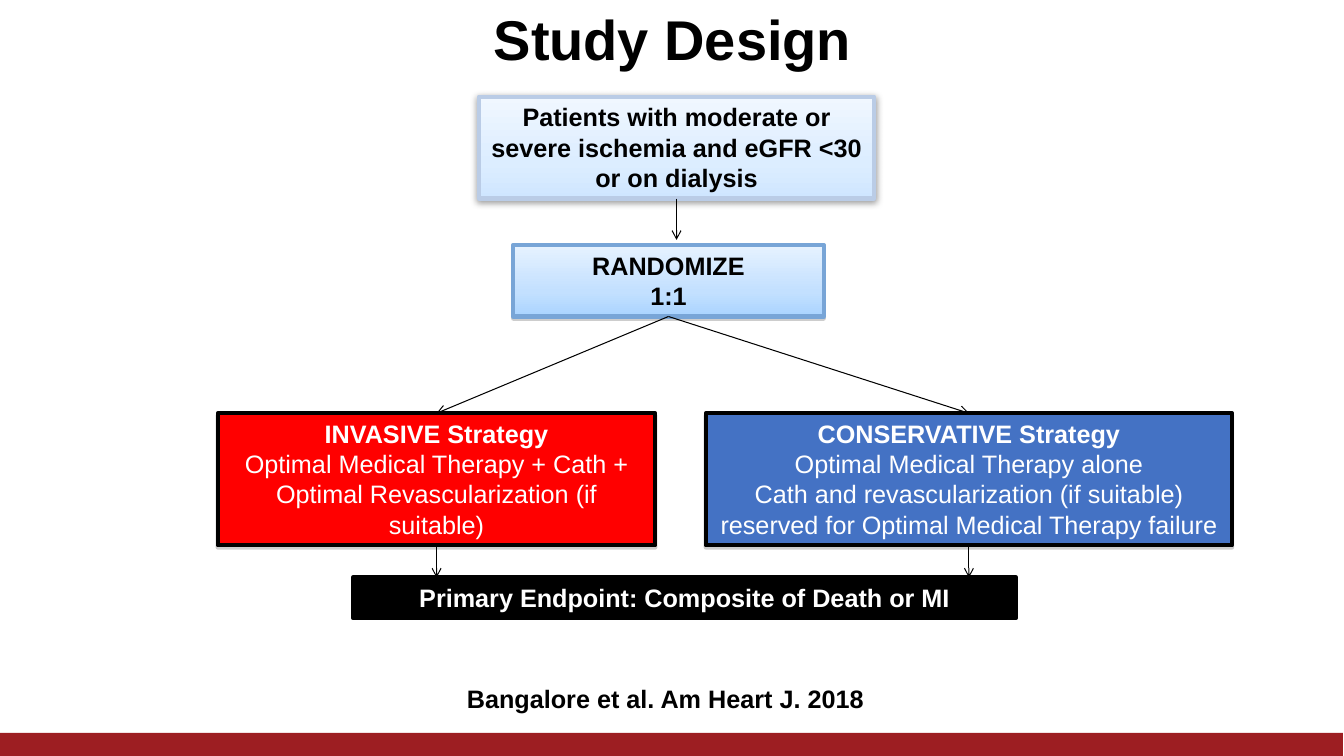
from lxml import etree
from pptx import Presentation
from pptx.dml.color import RGBColor
from pptx.enum.shapes import MSO_CONNECTOR, MSO_SHAPE
from pptx.enum.text import MSO_ANCHOR, MSO_AUTO_SIZE, PP_ALIGN
from pptx.oxml.ns import qn
from pptx.util import Inches, Pt

RECTANGLE = MSO_SHAPE.RECTANGLE
STRAIGHT = MSO_CONNECTOR.STRAIGHT
TOP, MIDDLE = MSO_ANCHOR.TOP, MSO_ANCHOR.MIDDLE
CENTER = PP_ALIGN.CENTER
GROW, FIXED = MSO_AUTO_SIZE.SHAPE_TO_FIT_TEXT, MSO_AUTO_SIZE.NONE
TOP_SIDE, BOTTOM_SIDE = 0, 2

COLORS = {
    "black": "000000", "white": "FFFFFF", "gray": "808080",
    "band": "9D1E22", "red": "FF0000", "blue": "4472C4",
    "randomize_edge": "78A5D7", "patients_edge": "BACCE6",
}
PATIENTS_STOPS = [(0, "F0F7FF"), (65, "DCEDFF"), (100, "CFE6FF")]
RANDOMIZE_STOPS = [(0, "E6F2FF"), (65, "C3E0FF"), (100, "AAD4FF")]


def rgb(name):
    return RGBColor.from_string(COLORS[name])


class SlideBuilder:
    """Holds the text style and the slide being filled."""

    style = {"name": "Arial", "size": Pt(18), "bold": True}

    def __init__(self, slide):
        self.slide = slide

    def set_text(self, box, lines, color="black", anchor=TOP, fit=GROW, spacing=None, **formats):
        frame = box.text_frame
        frame.word_wrap = True
        frame.auto_size = fit
        frame.vertical_anchor = anchor
        for index, line in enumerate(lines):
            para = frame.paragraphs[0] if index == 0 else frame.add_paragraph()
            para.alignment = CENTER
            para.line_spacing = spacing
            text, changes = line if isinstance(line, tuple) else (line, {})
            span = para.add_run()
            span.text = text
            for key, value in {**self.style, **formats, **changes}.items():
                setattr(span.font, key, value)
            span.font.color.rgb = rgb(color)

    def text(self, place, lines, **formats):
        box = self.slide.shapes.add_textbox(*map(Inches, place))
        self.set_text(box, lines, **formats)

    def box(self, place, fill, edge=None, lines=(), color="black", shadow=None):
        box = self.slide.shapes.add_shape(RECTANGLE, *map(Inches, place))
        box.shadow.inherit = False
        if isinstance(fill, list):
            self.shade(box, fill)
        else:
            box.fill.solid()
            box.fill.fore_color.rgb = rgb(fill)
        if edge:
            box.line.color.rgb = rgb(edge)
            box.line.width = Pt(3)
        else:
            box.line.fill.background()
        if shadow:
            self.cast_shadow(box, *shadow)
        if lines:
            self.set_text(box, lines, color)
        return box

    def shade(self, box, stops):
        box.fill.gradient()
        box.fill.gradient_angle = 270  # light at the top
        stop_list = box.element.spPr.find(".//" + qn("a:gsLst"))
        for stop in list(stop_list):
            stop_list.remove(stop)
        for position, color in stops:
            stop = etree.SubElement(stop_list, qn("a:gs"), pos=str(position * 1000))
            etree.SubElement(stop, qn("a:srgbClr"), val=color)

    def cast_shadow(self, box, color, blur):
        effects = box.element.spPr.find(qn("a:effectLst"))
        shadow = etree.SubElement(
            effects, qn("a:outerShdw"), blurRad=str(Pt(blur)), dist=str(Pt(1.6)),
            dir="5400000", algn="ctr", rotWithShape="0")
        tint = etree.SubElement(shadow, qn("a:srgbClr"), val=COLORS[color])
        etree.SubElement(tint, qn("a:alpha"), val="38000")

    def arrow(self, start, end, source, target=None):
        arrow = self.slide.shapes.add_connector(STRAIGHT, *map(Inches, (*start, *end)))
        arrow.begin_connect(source, BOTTOM_SIDE)
        if target:
            arrow.end_connect(target, TOP_SIDE)
        arrow.line.color.rgb = rgb("black")
        arrow.line.width = Pt(0.75)
        properties = arrow.element.spPr
        etree.SubElement(properties.find(qn("a:ln")), qn("a:tailEnd"), type="arrow")
        etree.SubElement(properties, qn("a:effectLst"))


def main():
    deck = Presentation()
    deck.slide_width, deck.slide_height = Inches(13.33), Inches(7.5)
    page = SlideBuilder(deck.slides.add_slide(deck.slide_layouts[6]))
    plain = {"bold": False}

    # Footer band and title
    page.box((-0.01, 7.27, 13.33, 0.23), "band")
    page.text((2.09, 0.07, 9.16, 0.71), ["Study Design"],
              size=Pt(40), anchor=MIDDLE, fit=FIXED, spacing=0.9)

    # Enrolment and randomization
    patients = page.box(
        (4.75, 0.96, 3.92, 1.01), PATIENTS_STOPS, "patients_edge",
        ["Patients with moderate or severe ischemia and eGFR <30 or on dialysis"],
        shadow=("black", 5))
    randomize = page.box(
        (5.09, 2.43, 3.08, 0.71), RANDOMIZE_STOPS, "randomize_edge",
        ["RANDOMIZE", "1:1"], shadow=("gray", 0))
    page.arrow((6.71, 1.97), (6.71, 2.38), patients)

    # Treatment arms with their arrows
    arms = [
        (2.16, 4.34, "red", [
            "INVASIVE Strategy",
            ("Optimal Medical Therapy + Cath +", plain),
            ("Optimal Revascularization (if suitable)", plain)]),
        (7, 5.22, "blue", [
            "CONSERVATIVE Strategy",
            ("Optimal Medical Therapy alone", plain),
            ("Cath and revascularization (if suitable) reserved for "
             "Optimal Medical Therapy failure", plain)]),
    ]
    for left, width, fill, lines in arms:
        arm = page.box((left, 4.1, width, 1.31), fill, "black", lines, "white", ("gray", 0))
        middle = left + width / 2
        page.arrow((6.63, 3.14), (middle, 4.1), randomize, arm)
        page.arrow((middle, 5.41), (middle, 5.73), arm)

    # Endpoint and citation
    page.box((3.5, 5.73, 6.58, 0.4), "black", "black",
             ["Primary Endpoint: Composite of Death or MI"], "white")
    page.text((3.63, 6.73, 5.94, 0.4), ["Bangalore et al. Am Heart J. 2018"])

    deck.save("out.pptx")


if __name__ == "__main__":
    main()
